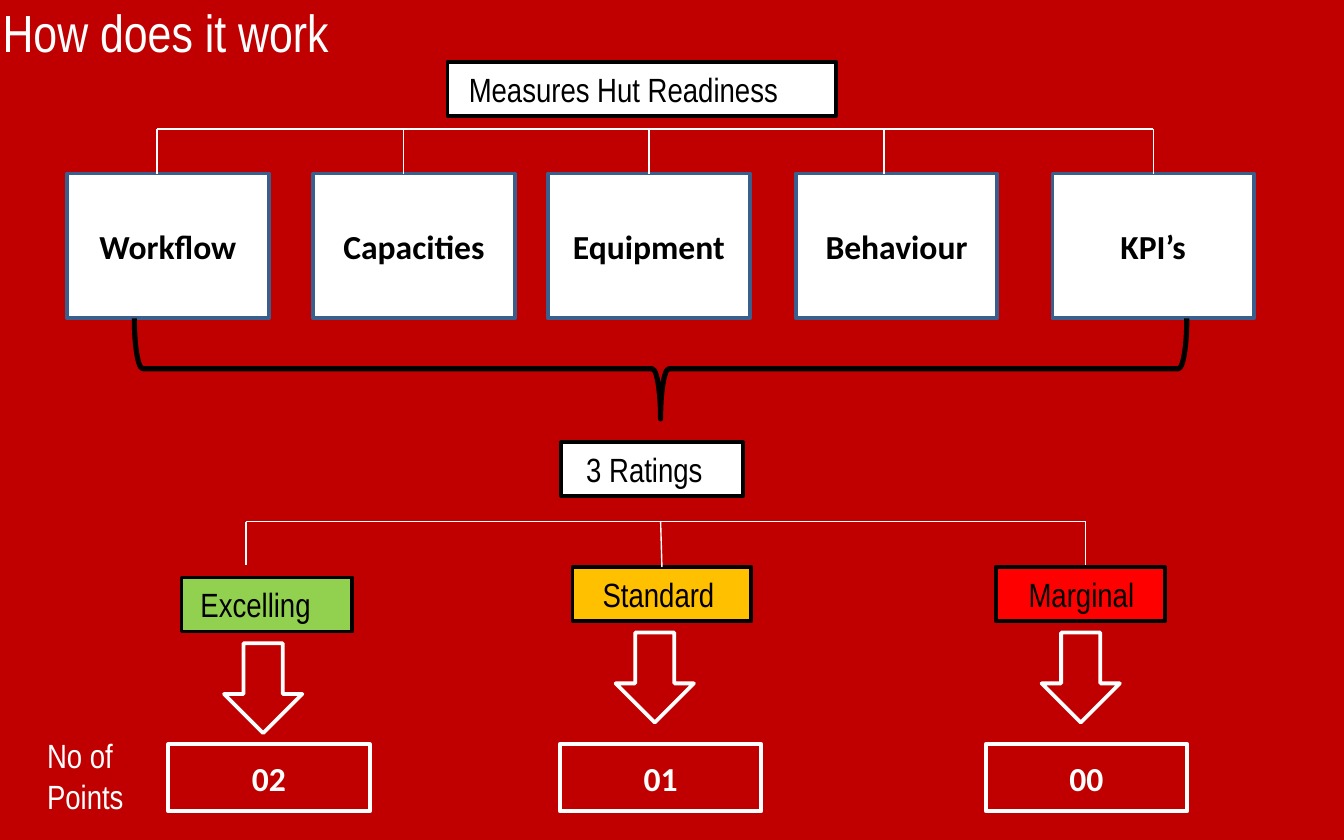
from dataclasses import dataclass

from lxml import etree
from pptx import Presentation
from pptx.dml.color import RGBColor
from pptx.enum.shapes import MSO_CONNECTOR, MSO_SHAPE
from pptx.enum.text import MSO_ANCHOR, PP_ALIGN
from pptx.oxml.ns import qn
from pptx.util import Cm, Pt

RECT, BRACE, ARROW = MSO_SHAPE.RECTANGLE, MSO_SHAPE.LEFT_BRACE, MSO_SHAPE.DOWN_ARROW
STRAIGHT = MSO_CONNECTOR.STRAIGHT
LEFT, CENTER = PP_ALIGN.LEFT, PP_ALIGN.CENTER
MIDDLE = MSO_ANCHOR.MIDDLE
TOP_SIDE = 0


@dataclass(frozen=True)
class Theme:
    red: str = "C00000"
    white: str = "FFFFFF"
    black: str = "000000"
    blue: str = "3A5F8C"
    green: str = "92D050"
    amber: str = "FFC000"
    bright_red: str = "FF0000"
    narrow: str = "Arial Narrow"
    strong: str = "Calibri"
    title_size: int = 28
    body_size: int = 18
    border: float = 2
    brace_line: float = 2.75
    hairline: float = 0.75


THEME = Theme()


def color(value):
    return RGBColor.from_string(value)


def write(shape, lines, ink, font=THEME.narrow, size=THEME.body_size,
          bold=False, align=LEFT, inset=0.25):
    """Fill a shape with one paragraph per line."""
    frame = shape.text_frame
    frame_format = {"word_wrap": True, "vertical_anchor": MIDDLE,
                    "margin_left": Cm(inset), "margin_right": Cm(0),
                    "margin_top": Cm(0), "margin_bottom": Cm(0)}
    if align == CENTER:
        frame_format["margin_right"] = Cm(inset)
    for name, value in frame_format.items():
        setattr(frame, name, value)
    for number, line in enumerate(lines):
        para = frame.add_paragraph() if number else frame.paragraphs[0]
        para.alignment = align
        span = para.add_run()
        span.text = line
        font_format = {"name": font, "size": Pt(size), "bold": bold}
        for name, value in font_format.items():
            setattr(span.font, name, value)
        span.font.color.rgb = color(ink)


def add_outline(page, kind, box, fill, line, width=THEME.border):
    shape = page.shapes.add_shape(kind, *map(Cm, box))
    shape.shadow.inherit = False
    if fill:
        shape.fill.solid()
        shape.fill.fore_color.rgb = color(fill)
    else:
        shape.fill.background()
    shape.line.color.rgb = color(line)
    shape.line.width = Pt(width)
    return shape


def add_text(page, box, lines, **text_format):
    write(page.shapes.add_textbox(*map(Cm, box)), lines, THEME.white, **text_format)


def add_label(page, box, text, fill, inset):
    shape = add_outline(page, RECT, box, fill, THEME.black)
    write(shape, [text], THEME.black, inset=inset)
    return shape


def add_block(page, box, text, fill, line, ink):
    shape = add_outline(page, RECT, box, fill, line)
    write(shape, [text], ink, font=THEME.strong, bold=True, align=CENTER)
    return shape


def add_line(page, x1, y1, x2, y2):
    line = page.shapes.add_connector(STRAIGHT, Cm(x1), Cm(y1), Cm(x2), Cm(y2))
    line.line.color.rgb = color(THEME.white)
    line.line.width = Pt(THEME.hairline)
    etree.SubElement(line._element.spPr, qn("a:effectLst"))
    return line


def add_branches(page, top, bottom, stems):
    """Draw a bar and a stem at each x; a stem with a target is joined to it."""
    xs = [x for x, _ in stems]
    add_line(page, min(xs), top, max(xs), top)
    for x, target in stems:
        stem = add_line(page, x, top, x, bottom)
        if target is not None:
            stem.end_connect(target, TOP_SIDE)


def add_pillars(page, left, top):
    """Five measured areas under one bar."""
    width, height, rise = 3.81, 2.74, 0.84
    middle = width / 2
    pillars = [("Workflow", 0, 1.7), ("Capacities", 4.65, 1.7),
               ("Equipment", 9.09, middle), ("Behaviour", 13.77, 1.67),
               ("KPI’s", 18.62, middle)]
    stems = []
    for text, offset, stem in pillars:
        x = left + offset
        block = add_block(page, (x, top, width, height), text,
                          THEME.white, THEME.blue, THEME.black)
        stems.append((x + stem, block if stem == middle else None))
    add_branches(page, top - rise, top, stems)


def add_brace(page, left, top, width, height):
    """A left brace turned so that its point faces down."""
    box = (left + (width - height) / 2, top + (height - width) / 2, height, width)
    brace = add_outline(page, BRACE, box, None, THEME.black, THEME.brace_line)
    brace.rotation = 270


def add_ratings(page, left, top):
    """Three ratings, each with an arrow down to its points."""
    width, middle = 3.81, 3.81 / 2
    arrow_width, arrow_height = 1.48, 1.7
    # text, points, fill, column offset, drop, label offset, label width, inset, stem
    ratings = [
        ("Excelling", "02", THEME.green, 0, 0.2, 0.25, 3.23, 0.36, 1.47),
        ("Standard", "01", THEME.amber, 7.4, 0, 0.24, 3.38, 0.57, middle),
        ("Marginal", "00", THEME.bright_red, 15.45, 0, 0.19, 3.2, 0.62, 1.89),
    ]
    stems = []
    for text, points, fill, offset, drop, shift, label_width, inset, stem in ratings:
        x = left + offset
        label = add_label(page, (x + shift, top + 0.86 + drop, label_width, 1.02),
                          text, fill, inset)
        add_outline(page, ARROW,
                    (x + middle - arrow_width / 2 - 0.11, top + 2.1 + drop,
                     arrow_width, arrow_height), THEME.red, THEME.white)
        add_block(page, (x, top + 4.21, width, 1.27), points,
                  THEME.red, THEME.white, THEME.white)
        stems.append((x + stem, label if stem == middle else None))
    add_branches(page, top, top + 0.83, stems)
    add_text(page, (left - 2.54, top + 3.9, 2.16, 1.8), ["No of", "Points"])


def main():
    deck = Presentation()
    deck.slide_width, deck.slide_height = Cm(25.4), Cm(15.88)
    page = deck.slides.add_slide(deck.slide_layouts[6])
    page.background.fill.solid()
    page.background.fill.fore_color.rgb = color(THEME.red)

    # Heading and what is measured
    add_text(page, (0, 0, 22.6, 1.2), ["How does it work"],
             size=THEME.title_size, inset=0.05)
    add_label(page, (8.46, 1.17, 7.34, 1.02), "Measures Hut Readiness", THEME.white, 0.4)
    add_pillars(page, 1.27, 3.28)

    # From the areas to the ratings
    add_brace(page, 2.54, 6.02, 19.89, 1.9)
    add_label(page, (10.61, 8.36, 3.43, 1.02), "3 Ratings", THEME.white, 0.47)
    add_ratings(page, 3.18, 9.86)

    deck.save("out.pptx")


if __name__ == "__main__":
    main()
